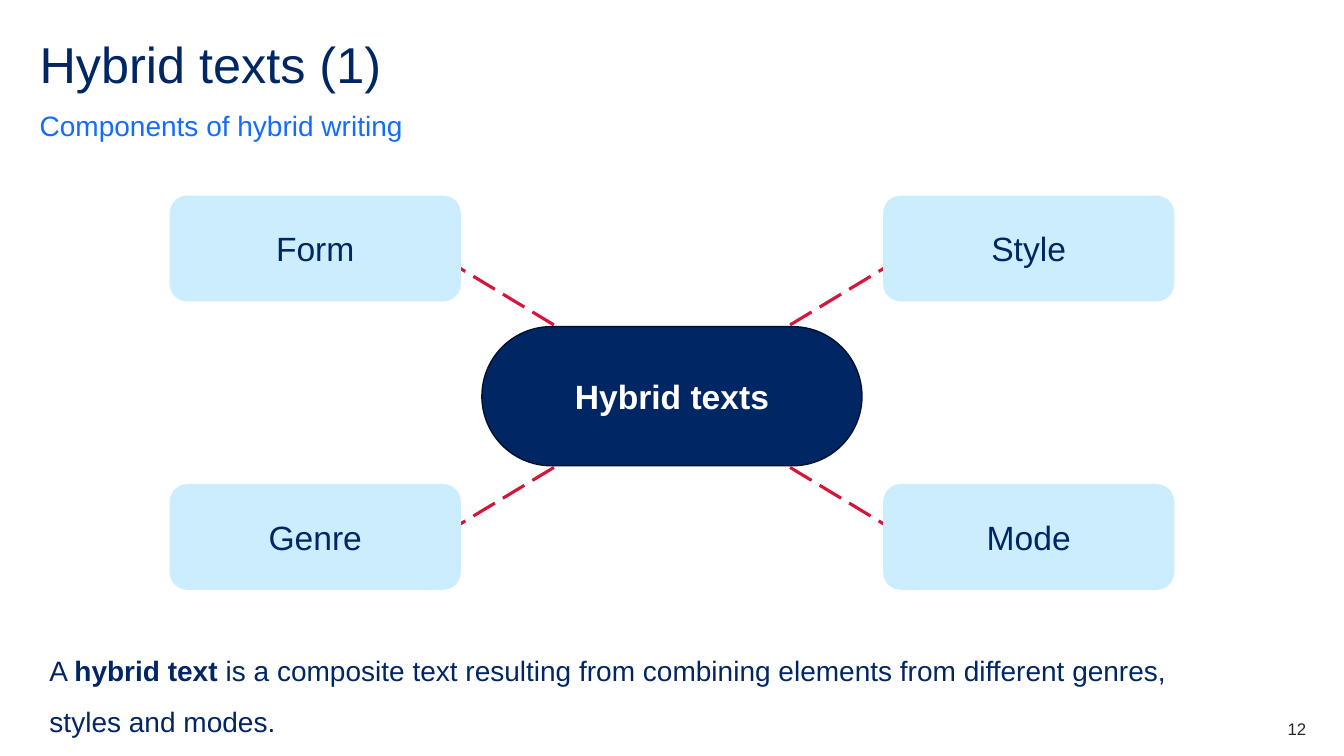
import itertools
from dataclasses import dataclass

import lxml.etree
import pptx
import pptx.dml.color
import pptx.enum.dml
import pptx.enum.shapes
import pptx.enum.text
import pptx.oxml.ns
import pptx.util

Pt = pptx.util.Pt
ALIGN = pptx.enum.text.PP_ALIGN
ANCHOR = pptx.enum.text.MSO_ANCHOR
FIT = pptx.enum.text.MSO_AUTO_SIZE
ROUND = pptx.enum.shapes.MSO_SHAPE.ROUNDED_RECTANGLE


@dataclass(frozen=True)
class Theme:
    font: str = "Arial"
    navy: str = "002664"
    edge: str = "00112C"
    blue: str = "146CFD"
    pale: str = "CBEDFD"
    red: str = "D7153A"
    white: str = "FFFFFF"
    ink: str = "22272B"
    title: int = 36
    node: int = 24
    body: int = 20
    small: int = 12


def assign(target, values):
    for name, value in values.items():
        setattr(target, name, value)


def color(code):
    return pptx.dml.color.RGBColor.from_string(code)


class Page:
    def __init__(self, slide, theme):
        self.shapes = slide.shapes
        self.theme = theme

    def fill(self, frame, runs, size, tint, para):
        """Fill a frame with one paragraph of (text, bold) runs."""
        line = frame.paragraphs[0]
        assign(line, para)
        for text, bold in runs:
            run = line.add_run()
            run.text = text
            assign(run.font, {"name": self.theme.font, "size": Pt(size), "bold": bold})
            run.font.color.rgb = color(tint)

    def text(self, box, runs, size, tint, para, inset=(0, 0), **frame):
        area = self.shapes.add_textbox(*map(Pt, box)).text_frame
        side, end = map(Pt, inset)
        assign(area, {"word_wrap": True, "margin_left": side, "margin_right": side,
                      "margin_top": end, "margin_bottom": end, **frame})
        self.fill(area, runs, size, tint, para)

    def node(self, mid, size, label, fill, tint, bold=False, edge=None, bend=None):
        """Draw a rounded box centred on mid."""
        (x, y), (wide, high) = mid, size
        shape = self.shapes.add_shape(
            ROUND, Pt(x - wide / 2), Pt(y - high / 2), Pt(wide), Pt(high))
        shape.shadow.inherit = False
        shape.fill.solid()
        shape.fill.fore_color.rgb = color(fill)
        if edge:
            shape.line.color.rgb = color(edge)
            shape.line.width = Pt(1)
        else:
            shape.line.fill.background()
        if bend is not None:
            shape.adjustments[0] = bend
        assign(shape.text_frame, {"word_wrap": True, "vertical_anchor": ANCHOR.MIDDLE})
        self.fill(shape.text_frame, [(label, bold)], self.theme.node, tint,
                  {"alignment": ALIGN.CENTER})

    def spoke(self, start, end):
        link = self.shapes.add_connector(
            pptx.enum.shapes.MSO_CONNECTOR.STRAIGHT, *map(Pt, (*start, *end)))
        link.line.color.rgb = color(self.theme.red)
        assign(link.line, {"width": Pt(2.25),
                           "dash_style": pptx.enum.dml.MSO_LINE.LONG_DASH})
        lxml.etree.SubElement(link._element.spPr, pptx.oxml.ns.qn("a:effectLst"))


def main():
    deck = pptx.Presentation()
    assign(deck, {"slide_width": Pt(960), "slide_height": Pt(540)})
    theme = Theme()
    page = Page(deck.slides.add_slide(deck.slide_layouts[6]), theme)
    roomy = {"line_spacing": 1.5, "space_after": Pt(12)}

    page.text((28.3, 28.3, 793.5, 43.2), [("Hybrid texts (1)", False)],
              theme.title, theme.navy, {"line_spacing": 0.9})
    page.text((28.3, 77, 793.5, 24.5), [("Components of hybrid writing", False)],
              theme.body, theme.blue, roomy, vertical_anchor=ANCHOR.BOTTOM)

    hub = (480, 283)
    corners = list(itertools.product((-1, 1), repeat=2))
    for right, down in corners:
        page.spoke(hub, (hub[0] + 174 * right, hub[1] + 105 * down))
    page.node(hub, (271.5, 99.4), "Hybrid texts", theme.navy, theme.white,
              bold=True, edge=theme.edge, bend=0.5)
    for (right, down), label in zip(corners, ("Form", "Genre", "Style", "Mode")):
        page.node((480 + 254.8 * right, 280.5 + 103 * down), (208, 75.6),
                  label, theme.pale, theme.navy)

    page.text((28.3, 451.4, 847.5, 75.6),
              [("A ", False), ("hybrid text ", True),
               ("is a composite text resulting from combining elements from "
                "different genres, styles and modes.", False)],
              theme.body, theme.navy, roomy, inset=(7.2, 3.6),
              auto_size=FIT.SHAPE_TO_FIT_TEXT)
    page.text((876.2, 513.4, 56.9, 14.4), [("12", False)],
              theme.small, theme.ink, {"alignment": ALIGN.RIGHT})
    deck.save("out.pptx")


if __name__ == "__main__":
    main()
